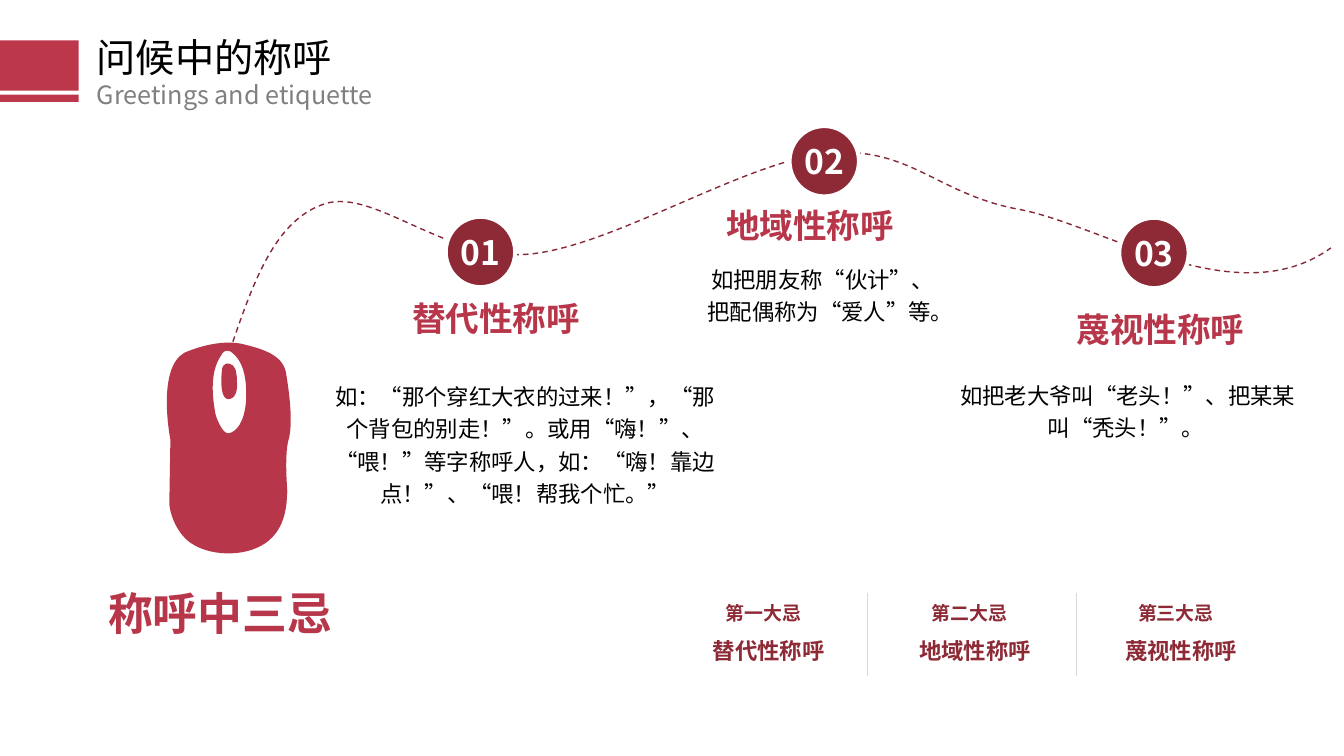
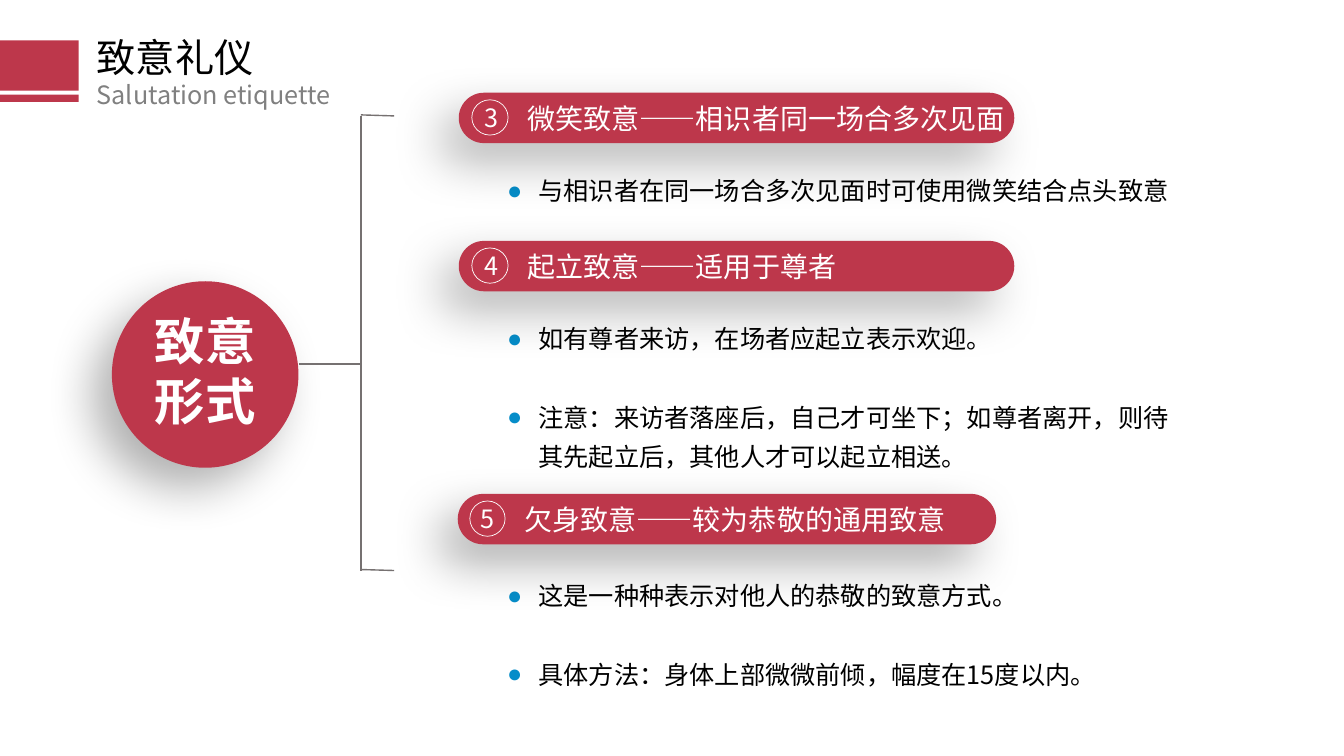
"""Build two slides on forms of address and greeting etiquette."""
from lxml import etree
from pptx import Presentation
from pptx.dml.color import RGBColor
from pptx.enum import dml, shapes, text
from pptx.oxml import ns
from pptx.util import Inches, Pt

FONT = "Noto Sans CJK SC"
RED = RGBColor(0xBD, 0x37, 0x4B)
MOUSE_RED = RGBColor(0xB7, 0x36, 0x4A)
DARK_RED = RGBColor(0x8D, 0x2A, 0x36)
TRACK_RED = RGBColor(0x87, 0x28, 0x37)
BULLET_BLUE = RGBColor(0x06, 0x8D, 0xC9)
BLACK = RGBColor(0, 0, 0)
WHITE = RGBColor(0xFF, 0xFF, 0xFF)
SUBTITLE_GRAY = RGBColor(0x80, 0x80, 0x80)
BRACKET_GRAY = RGBColor(0x76, 0x71, 0x71)
DIVIDER_GRAY = RGBColor(0xD9, 0xD9, 0xD9)
LEFT, CENTER = text.PP_ALIGN.LEFT, text.PP_ALIGN.CENTER
TOP, MIDDLE = text.MSO_ANCHOR.TOP, text.MSO_ANCHOR.MIDDLE
OVAL = shapes.MSO_SHAPE.OVAL


def write_text(shape, lines, size, color, box=None, bold=False, align=LEFT, anchor=TOP,
               margins=(0.1, 0.05, 0.1, 0.05), spacing=1.0, gap=0, bullet=False):
    """Fill a shape with paragraphs; a line is a string or a list of (text, size) runs."""
    if box:
        shape.left, shape.top, shape.width, shape.height = map(Inches, box)
    frame = shape.text_frame
    frame.word_wrap = True
    frame.auto_size = text.MSO_AUTO_SIZE.NONE
    frame.vertical_anchor = anchor
    (frame.margin_left, frame.margin_top,
     frame.margin_right, frame.margin_bottom) = map(Inches, margins)
    for index, line in enumerate(lines):
        paragraph = frame.add_paragraph() if index else frame.paragraphs[0]
        paragraph.alignment = align
        paragraph.line_spacing = spacing
        paragraph.space_before = Pt(gap if index else 0)
        properties = paragraph._p.get_or_add_pPr()
        indent = Inches(0.31) if bullet else 0
        properties.set("marL", str(indent))
        properties.set("indent", str(-indent))
        if bullet:
            bullet_color = etree.SubElement(properties, ns.qn("a:buClr"))
            etree.SubElement(bullet_color, ns.qn("a:srgbClr"), val=str(BULLET_BLUE))
            etree.SubElement(properties, ns.qn("a:buChar"), char="●")
        else:
            etree.SubElement(properties, ns.qn("a:buNone"))
        for words, points in [(line, size)] if isinstance(line, str) else line:
            run = paragraph.add_run()
            run.text = words
            run.font.size = Pt(points)
            run.font.bold = bold
            run.font.color.rgb = color
            run.font.name = FONT
            etree.SubElement(run._r.get_or_add_rPr(), ns.qn("a:ea"), typeface=FONT)


def add_figure(slide, kind, box, fill=None, outline=None, shadow=None):
    """Add a preset shape with an optional fill, (colour, width) outline and shadow opacity."""
    figure = slide.shapes.add_shape(kind, *map(Inches, box))
    figure.shadow.inherit = False
    if fill is None:
        figure.fill.background()
    else:
        figure.fill.solid()
        figure.fill.fore_color.rgb = fill
    if outline:
        figure.line.color.rgb, figure.line.width = outline[0], Pt(outline[1])
    else:
        figure.line.fill.background()
    if shadow:
        effects = figure._element.spPr.find(ns.qn("a:effectLst"))
        outer = etree.SubElement(effects, ns.qn("a:outerShdw"), blurRad=str(Pt(35)),
                                 dist=str(Pt(20)), dir=str(135 * 60000), algn="tr",
                                 rotWithShape="0")
        shade = etree.SubElement(outer, ns.qn("a:srgbClr"), val="000000")
        etree.SubElement(shade, ns.qn("a:alpha"), val=str(shadow * 1000))
    return figure


presentation = Presentation()
presentation.slide_width = Inches(13.33)
presentation.slide_height = Inches(7.5)

for layout, title, subtitle in [
    ("Title and Content", "问候中的称呼", "Greetings and etiquette"),
    ("Comparison", "致意礼仪", "Salutation etiquette"),
]:
    slide = presentation.slides.add_slide(presentation.slide_layouts.get_by_name(layout))
    for top, height in [(0.4, 0.5), (0.94, 0.07)]:
        add_figure(slide, shapes.MSO_SHAPE.RECTANGLE, (0, top, 0.78, height), RED)
    write_text(slide.shapes.title, [title], 28, BLACK, (0.86, 0.28, 2.56, 0.57))
    write_text(slide.placeholders[1], [subtitle], 18, SUBTITLE_GRAY, (0.86, 0.74, 3.07, 0.4))

address_slide, salute_slide = presentation.slides

mouse_body = [
    [(2.84, 3.72),
     (2.82, 3.54), (2.65, 3.47), (2.39, 3.41), (2.13, 3.36), (1.83, 3.5), (1.83, 3.5),
     (1.56, 3.65), (1.68, 4.31), (1.69, 4.36), (1.69, 4.4), (1.68, 4.95), (1.68, 5),
     (1.68, 5.06), (1.74, 5.31), (1.93, 5.41), (2.12, 5.52), (2.47, 5.53), (2.67, 5.36),
     (2.87, 5.19), (2.84, 4.9), (2.85, 4.88), (2.85, 4.86), (2.82, 4.53), (2.86, 4.37),
     (2.91, 4.21), (2.87, 3.9), (2.84, 3.72)],
    [(2.44, 3.99),
     (2.42, 4.19), (2.35, 4.28), (2.27, 4.3), (2.2, 4.31), (2.14, 4.12), (2.14, 4.12),
     (2.05, 3.67), (2.19, 3.54), (2.21, 3.5), (2.24, 3.46), (2.29, 3.49), (2.29, 3.49),
     (2.43, 3.59), (2.45, 3.79), (2.44, 3.99)],
]
mouse_wheel = [
    [(2.28, 3.61),
     (2.28, 3.61), (2.2, 3.58), (2.2, 3.69), (2.19, 3.79), (2.19, 3.95), (2.26, 3.96),
     (2.33, 3.96), (2.36, 3.89), (2.35, 3.78), (2.35, 3.66), (2.32, 3.62), (2.28, 3.61)],
]
track = [
    [(2.31, 3.39),
     (2.52, 2.78), (2.74, 2.17), (3.23, 2.02), (3.72, 1.87), (4.43, 2.6), (5.26, 2.52),
     (6.09, 2.44), (7.41, 1.59), (8.22, 1.52), (9.03, 1.45), (9.29, 1.93), (10.12, 2.08),
     (10.95, 2.24), (12.27, 3.13), (13.2, 2.46)],
]
for contours, closed in [(mouse_body, True), (mouse_wheel, True), (track, False)]:
    builder = address_slide.shapes.build_freeform(*map(Inches, contours[0][0]))
    for index, (start, *controls) in enumerate(contours):
        if index:
            builder.move_to(*map(Inches, start))
        builder.add_line_segments([(Inches(x), Inches(y)) for x, y in controls], close=closed)
    outline = builder.convert_to_shape()
    segments = list(outline._element.iter(ns.qn("a:lnTo")))
    for first, second, third in zip(segments[::3], segments[1::3], segments[2::3]):
        first.tag = ns.qn("a:cubicBezTo")
        for segment in (second, third):
            first.append(segment[0])
            segment.getparent().remove(segment)
    outline.shadow.inherit = False
    if closed:
        outline.fill.solid()
        outline.fill.fore_color.rgb = MOUSE_RED
        outline.line.fill.background()
    else:
        outline.fill.background()
        outline.line.color.rgb = TRACK_RED
        outline.line.width = Pt(1)
        outline.line.dash_style = dml.MSO_LINE.DASH

taboos = [
    ("01", "第一大忌", "替代性称呼", (4.42, 2.15), (3.31, 2.83, 3.22, 0.66),
     "如：“那个穿红大衣的过来！”，“那个背包的别走！”。或用“嗨！”、“喂！”等字称呼人，"
     "如：“嗨！靠边点！”、“喂！帮我个忙。”", (3.22, 3.7, 3.98, 1.63), CENTER),
    ("02", "第二大忌", "地域性称呼", (7.83, 1.25), (6.25, 1.83, 3.57, 0.8),
     [(" ", 11), ("如把朋友称“伙计”、把配偶称为“爱人”等。", 16)], (6.92, 2.54, 2.59, 0.87), LEFT),
    ("03", "第三大忌", "蔑视性称呼", (11.1, 2.16), (9.9, 2.93, 3.22, 0.66),
     [(" ", 11), ("如把老大爷叫“老头！”、把某某叫“秃头！”。", 16)], (9.39, 3.69, 3.56, 1.63), CENTER),
]
address_texts = [("称呼中三忌", 32, MOUSE_RED, (0.36, 5.76, 3.65, 0.83), True, CENTER, TOP, 1)]
for index, (number, rank, name, corner, name_box, example, example_box, align) in enumerate(taboos):
    badge = add_figure(address_slide, OVAL, (*corner, 0.69, 0.7), DARK_RED, (WHITE, 3))
    write_text(badge, [number], 24, WHITE, bold=True, align=CENTER, anchor=MIDDLE,
               margins=(0, 0, 0, 0))
    shift = index * 2.045
    address_texts += [
        (name, 24, MOUSE_RED, name_box, True, CENTER, MIDDLE, 1),
        (example, 16, BLACK, example_box, False, align, TOP, 1.2),
        (rank, 13.5, DARK_RED, (7.1 + shift, 5.92, 1.05, 0.31), True, LEFT, TOP, 1),
        (name, 16, DARK_RED, (6.76 + shift, 6.24, 1.73, 0.43), True, CENTER, MIDDLE, 1),
    ]
for line, size, color, box, bold, align, anchor, spacing in address_texts:
    text_box = address_slide.shapes.add_textbox(*map(Inches, box))
    write_text(text_box, [line], size, color, bold=bold, align=align, anchor=anchor,
               spacing=spacing)

hub = add_figure(salute_slide, OVAL, (1.11, 2.79, 1.85, 1.85), RED, shadow=31)
write_text(hub, ["致意", "形式"], 36, WHITE, bold=True, align=CENTER, anchor=MIDDLE,
           margins=(0, 0, 0, 0.08))

salutes = [
    ("3", "微笑致意——相识者同一场合多次见面", (4.55, 0.92, 5.51, 0.5), 28, 0.61,
     (0.13, 0.36, 0.04),
     ["与相识者在同一场合多次见面时可使用微笑结合点头致意"], (1.6, 0.46)),
    ("4", "起立致意——适用于尊者", (4.55, 2.39, 5.51, 0.5), 28, 0.61,
     (0.13, 0.36, 0.04),
     ["如有尊者来访，在场者应起立表示欢迎。",
      "注意：来访者落座后，自己才可坐下；如尊者离开，则待其先起立后，其他人才可以起立相送。"],
     (3.07, 1.68)),
    ("5", "欠身致意——较为恭敬的通用致意", (4.54, 4.9, 5.34, 0.5), 31, 0.59,
     (0.12, 0.35, 0),
     ["这是一种种表示对他人的恭敬的致意方式。", "具体方法：身体上部微微前倾，幅度在15度以内。"],
     (5.62, 1.28)),
]
for index, (number, heading, bar_box, opacity, indent, ring_place, points, span) in enumerate(salutes):
    bar = add_figure(salute_slide, shapes.MSO_SHAPE.ROUNDED_RECTANGLE, bar_box, RED,
                     shadow=opacity)
    bar.adjustments[0] = 0.5
    write_text(bar, [heading], 20, WHITE, anchor=MIDDLE, margins=(indent, 0, 0, 0))
    ring_offset, ring_width, nudge = ring_place
    ring_box = (bar_box[0] + ring_offset, bar_box[1] + 0.07, ring_width, 0.35)
    ring = add_figure(salute_slide, OVAL, ring_box, outline=(WHITE, 0.5))
    write_text(ring, [number], 18, WHITE, align=CENTER, anchor=MIDDLE,
               margins=(nudge, 0, 0, 0))
    top, height = span
    write_text(salute_slide.placeholders[index + 2], points, 18, BLACK,
               (4.93, top, 6.99, height), spacing=1.3, gap=28, bullet=True)

for slide, start, end, color, width in [
    (address_slide, (8.6, 5.88), (8.6, 6.71), DIVIDER_GRAY, 0.25),
    (address_slide, (10.67, 5.88), (10.67, 6.71), DIVIDER_GRAY, 0.25),
    (salute_slide, (3.59, 3.61), (2.97, 3.61), BRACKET_GRAY, 1),
    (salute_slide, (3.58, 1.15), (3.58, 5.66), BRACKET_GRAY, 1),
    (salute_slide, (3.91, 1.15), (3.58, 1.14), BRACKET_GRAY, 1),
    (salute_slide, (3.91, 5.66), (3.58, 5.65), BRACKET_GRAY, 1),
]:
    connector = slide.shapes.add_connector(shapes.MSO_CONNECTOR.STRAIGHT,
                                           *map(Inches, start + end))
    connector.line.color.rgb = color
    connector.line.width = Pt(width)
    etree.SubElement(connector._element.spPr, ns.qn("a:effectLst"))

presentation.save("out.pptx")
